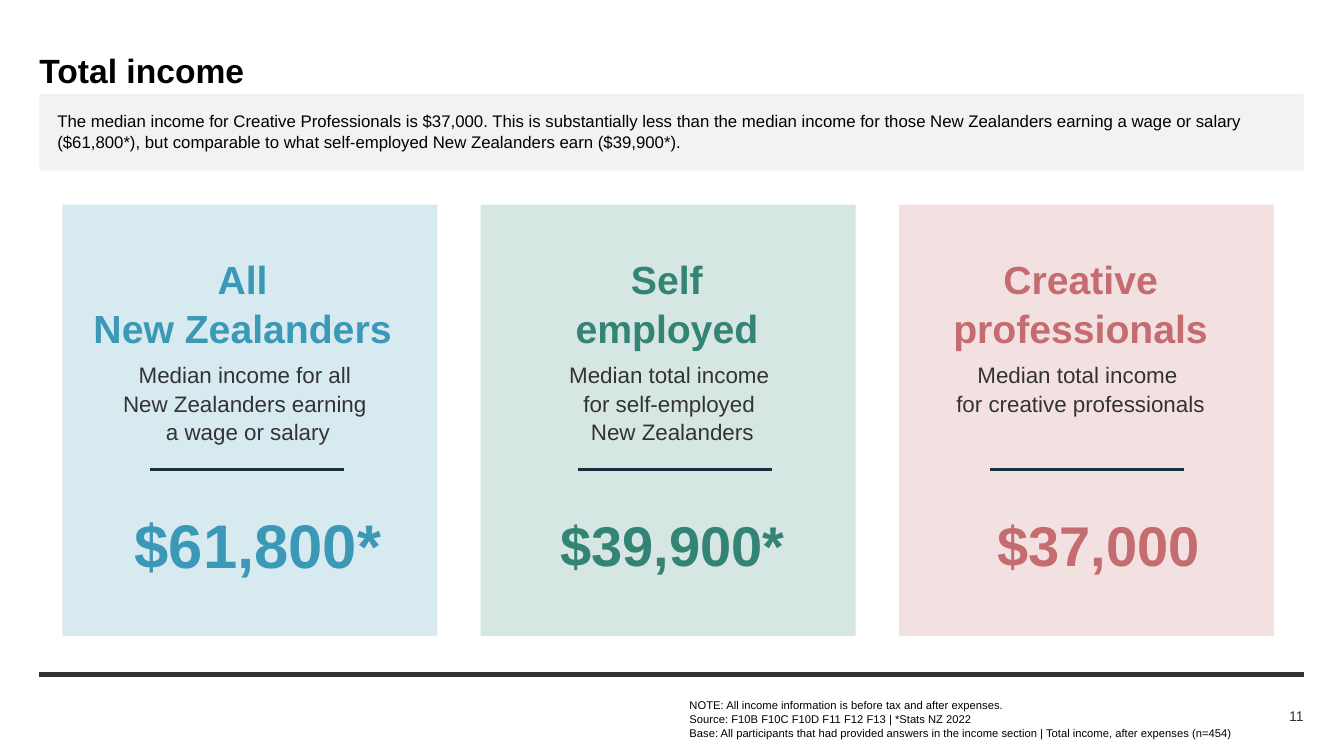
from dataclasses import dataclass

from lxml import etree
from pptx import Presentation
from pptx import util as u
from pptx.dml.color import RGBColor
from pptx.enum import shapes, text
from pptx.oxml import ns

BLACK = RGBColor(0x00, 0x00, 0x00)
CHARCOAL = RGBColor(0x33, 0x33, 0x33)
NAVY = RGBColor(0x16, 0x31, 0x3E)
PALE_GREY = RGBColor(0xF2, 0xF2, 0xF2)
BLUE = RGBColor(0x3B, 0x98, 0xB7)
GREEN = RGBColor(0x34, 0x84, 0x76)
ROSE = RGBColor(0xC4, 0x6C, 0x6F)

MARGIN, CONTENT_WIDTH = 28.2, 903
PANEL_LEFT, PANEL_STEP, PANEL_WIDTH = 44.6, 298.8, 267.8
PANEL_TOP, PANEL_HEIGHT = 146.2, 308.2
DIVIDER_TOP, DIVIDER_WIDTH = 335.5, 138.6
LEFT, CENTER, RIGHT = text.PP_ALIGN.LEFT, text.PP_ALIGN.CENTER, text.PP_ALIGN.RIGHT
TOP, MIDDLE = text.MSO_ANCHOR.TOP, text.MSO_ANCHOR.MIDDLE


@dataclass(frozen=True)
class Box:
    left: float
    top: float
    width: float
    height: float

    def lengths(self) -> list[u.Length]:
        return [u.Pt(n) for n in (self.left, self.top, self.width, self.height)]


@dataclass(frozen=True)
class Line:
    """One paragraph and its look."""
    wording: str
    size: float
    color: RGBColor = BLACK
    bold: bool = False
    align: text.PP_ALIGN = LEFT
    after: float = 0


@dataclass(frozen=True)
class IncomePanel:
    color: RGBColor
    group: str
    measure: str
    text_left: float
    divider_left: float
    income: str
    income_size: float
    income_left: float
    income_width: float


PANELS = [
    IncomePanel(BLUE, "All \nNew Zealanders ",
                "Median income for all \nNew Zealanders earning \na wage or salary",
                43.2, 107.3, "$61,800*", 44, 50.4, 267.8),
    IncomePanel(GREEN, "Self \nemployed ",
                "Median total income \nfor self-employed \nNew Zealanders",
                346.3, 412.7, "$39,900*", 40, 353.5, 253.4),
    IncomePanel(ROSE, "Creative professionals",
                "Median total income \nfor creative professionals",
                637.9, 707, "$37,000", 40, 663.8, 241.9),
]


def add_text(slide, box: Box, lines: list[Line], anchor: text.MSO_ANCHOR = TOP) -> None:
    frame = slide.shapes.add_textbox(*box.lengths()).text_frame
    frame_format = dict(word_wrap=True, vertical_anchor=anchor, margin_left=0,
                        margin_right=0, margin_top=0, margin_bottom=0)
    for name, value in frame_format.items():
        setattr(frame, name, value)
    for index, line in enumerate(lines):
        paragraph = frame.add_paragraph() if index else frame.paragraphs[0]
        paragraph.text = line.wording
        paragraph_format = dict(alignment=line.align, line_spacing=1.05,
                                space_before=u.Pt(0), space_after=u.Pt(line.after))
        for name, value in paragraph_format.items():
            setattr(paragraph, name, value)
        font_format = dict(name="Arial", size=u.Pt(line.size), bold=line.bold)
        for run in paragraph.runs:
            for name, value in font_format.items():
                setattr(run.font, name, value)
            run.font.color.rgb = line.color


def add_block(slide, box: Box, color: RGBColor, opacity: int = 100) -> None:
    block = slide.shapes.add_shape(shapes.MSO_SHAPE.RECTANGLE, *box.lengths())
    block.shadow.inherit = False
    block.fill.solid()
    block.fill.fore_color.rgb = color
    block.line.fill.background()
    if opacity < 100:
        tint = block.fill._xPr.find(".//" + ns.qn("a:srgbClr"))
        etree.SubElement(tint, ns.qn("a:alpha"), val=str(opacity * 1000))


def add_rule(slide, left: float, top: float, width: float,
             color: RGBColor, weight: float) -> None:
    ends = [u.Pt(n) for n in (left, top, left + width, top)]
    rule = slide.shapes.add_connector(shapes.MSO_CONNECTOR.STRAIGHT, *ends)
    rule.line.color.rgb = color
    rule.line.width = u.Pt(weight)
    etree.SubElement(rule._element.spPr, ns.qn("a:effectLst"))


def add_panel(slide, panel: IncomePanel, index: int) -> None:
    add_block(slide, Box(PANEL_LEFT + index * PANEL_STEP, PANEL_TOP,
                         PANEL_WIDTH, PANEL_HEIGHT), panel.color, 20)
    add_text(slide, Box(panel.text_left, 180.7, PANEL_WIDTH, 131.8), [
        Line(panel.group, 28, panel.color, True, CENTER, 6),
        Line(panel.measure, 16, CHARCOAL, False, CENTER, 6)])
    add_rule(slide, panel.divider_left, DIVIDER_TOP, DIVIDER_WIDTH, NAVY, 2.25)
    add_text(slide, Box(panel.income_left, 357.8, panel.income_width, 59),
             [Line(panel.income, panel.income_size, panel.color, True, CENTER)], MIDDLE)


def main() -> None:
    deck = Presentation()
    deck.slide_width, deck.slide_height = u.Pt(960), u.Pt(540)
    slide = deck.slides.add_slide(deck.slide_layouts[6])

    # Title and summary
    add_text(slide, Box(MARGIN, 33.8, CONTENT_WIDTH, 31.7),
             [Line("Total income", 24, bold=True)], MIDDLE)
    add_block(slide, Box(MARGIN, 67, CONTENT_WIDTH, 54.7), PALE_GREY)
    add_text(slide, Box(41, 78.5, CONTENT_WIDTH, 31), [Line(
        "The median income for Creative Professionals is $37,000. This is substantially "
        "less than the median income for those New Zealanders earning a wage or salary "
        "($61,800*), but comparable to what self-employed New Zealanders earn "
        "($39,900*).", 12)])

    # Income panels
    for index, panel in enumerate(PANELS):
        add_panel(slide, panel, index)

    # Footer
    add_rule(slide, MARGIN, 481.8, CONTENT_WIDTH, CHARCOAL, 3)
    notes = ["NOTE: All income information is before tax and after expenses.",
             "Source: F10B F10C F10D F11 F12 F13 | *Stats NZ 2022",
             "Base: All participants that had provided answers in the income section "
             "| Total income, after expenses (n=454)"]
    add_text(slide, Box(492.5, 498.2, 467, 29), [Line(note, 8) for note in notes])
    add_text(slide, Box(854.6, 503.3, 76.6, 15.8),
             [Line("11", 10, CHARCOAL, align=RIGHT)], MIDDLE)

    deck.save("out.pptx")


if __name__ == "__main__":
    main()
